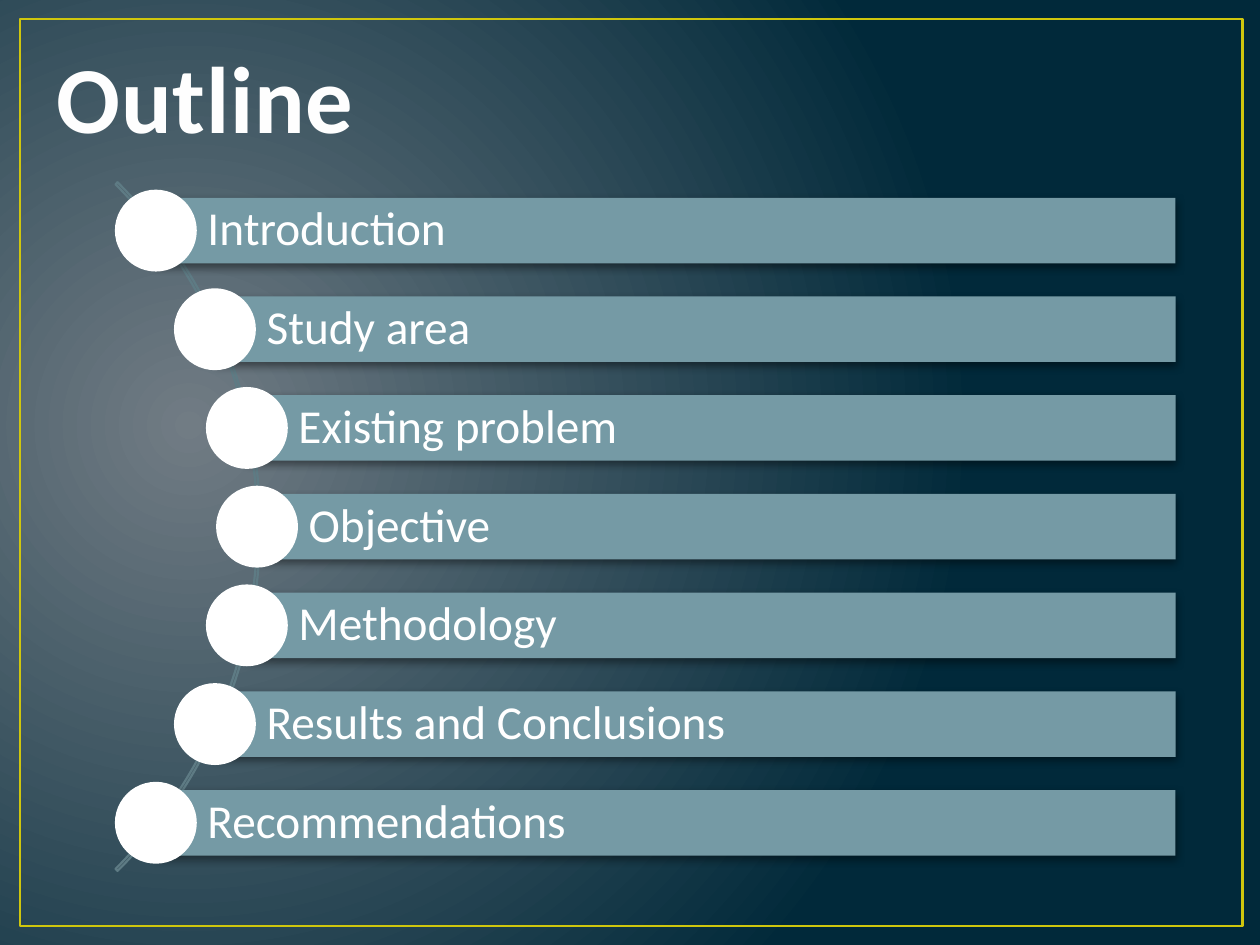
from math import sqrt

from pptx import Presentation
from pptx.dml.color import RGBColor
from pptx.enum.shapes import MSO_SHAPE
from pptx.enum.text import MSO_ANCHOR, PP_ALIGN
from pptx.oxml import parse_xml
from pptx.oxml.ns import nsdecls, qn
from pptx.util import Inches, Pt

WHITE = RGBColor(0xFF, 0xFF, 0xFF)
TITLE_WHITE = RGBColor(0xFE, 0xFE, 0xFE)
GLOW_GREY = RGBColor(0x71, 0x7C, 0x84)
NAVY = RGBColor(0x01, 0x29, 0x3A)
FRAME_YELLOW = RGBColor(0xCF, 0xC6, 0x0D)
ARC_TEAL = RGBColor(0x5E, 0x7B, 0x84)
BAR_TEAL = RGBColor(0x75, 0x9A, 0xA5)

TOPICS = [
    "Introduction",
    "Study area",
    "Existing problem",
    "Objective",
    "Methodology",
    "Results and Conclusions",
    "Recommendations",
]
FIRST_Y, LAST_Y = 1.83, 6.53
ARC_X, ARC_Y = -1.8, (FIRST_Y + LAST_Y) / 2
ARC_SIZE = 7.73
DOT_ORBIT = 3.84
BAR_RIGHT, BAR_HEIGHT = 9.33, 0.52
DOT_SIZE = 0.65


def paint_background(slide):
    fill = slide.background.fill
    fill.gradient()
    for stop, color in zip(fill.gradient_stops, (GLOW_GREY, NAVY)):
        stop.color.rgb = color
    gradient = slide.element.find(".//" + qn("a:gradFill"))
    gradient.replace(gradient.find(qn("a:lin")), parse_xml(
        f'<a:path {nsdecls("a")} path="circle">'
        '<a:fillToRect l="15000" t="50000" r="85000" b="60000"/></a:path>'))


def add_figure(slide, preset, left, top, width, height,
               fill=None, line=None, weight=1):
    figure = slide.shapes.add_shape(
        preset, Inches(left), Inches(top), Inches(width), Inches(height))
    figure.shadow.inherit = False
    if fill is None:
        figure.fill.background()
    else:
        figure.fill.solid()
        figure.fill.fore_color.rgb = fill
    if line is None:
        figure.line.fill.background()
    else:
        figure.line.color.rgb = line
        figure.line.width = Pt(weight)
    return figure


def drop_shadow(figure):
    figure.element.spPr.find(qn("a:effectLst")).append(parse_xml(
        f'<a:outerShdw {nsdecls("a")} blurRad="{Pt(5)}" dist="{Pt(2)}" '
        'dir="5400000" rotWithShape="0"><a:srgbClr val="000000">'
        '<a:alpha val="43000"/></a:srgbClr></a:outerShdw>'))


def write_text(holder, text, size, color, bold=False, anchor=MSO_ANCHOR.MIDDLE,
               insets=(0.1, 0.05, 0.1, 0.05), line_spacing=1.0, tracking=None):
    frame = holder.text_frame
    frame.word_wrap = True
    frame.vertical_anchor = anchor
    (frame.margin_left, frame.margin_top,
     frame.margin_right, frame.margin_bottom) = map(Inches, insets)
    paragraph = frame.paragraphs[0]
    paragraph.alignment = PP_ALIGN.LEFT
    paragraph.line_spacing = line_spacing
    run = paragraph.add_run()
    run.text = text
    run.font.name = "Calibri"
    run.font.size = Pt(size)
    run.font.bold = bold
    run.font.color.rgb = color
    if tracking:
        run.font._element.set("spc", str(int(tracking * 100)))


def add_title(slide, text):
    title = slide.shapes.add_textbox(
        Inches(0.35), Inches(0.25), Inches(8.33), Inches(1.01))
    write_text(title, text, size=54, color=TITLE_WHITE, bold=True,
               anchor=MSO_ANCHOR.BOTTOM, tracking=0.5)


def add_arc(slide):
    arc = add_figure(slide, MSO_SHAPE.BLOCK_ARC, ARC_X - ARC_SIZE / 2,
                     ARC_Y - ARC_SIZE / 2, ARC_SIZE, ARC_SIZE,
                     line=ARC_TEAL, weight=1.25)
    for index, value in enumerate((189, 27, 0.003)):
        arc.adjustments[index] = value


def add_topic(slide, topic, y):
    x = ARC_X + sqrt(DOT_ORBIT ** 2 - (y - ARC_Y) ** 2)
    bar = add_figure(slide, MSO_SHAPE.RECTANGLE, x, y - BAR_HEIGHT / 2,
                     BAR_RIGHT - x, BAR_HEIGHT, fill=BAR_TEAL)
    drop_shadow(bar)
    write_text(bar, topic, size=27, color=WHITE,
               insets=(0.41, 0.07, 0.07, 0.07), line_spacing=0.9)
    add_figure(slide, MSO_SHAPE.OVAL, x - DOT_SIZE / 2, y - DOT_SIZE / 2,
               DOT_SIZE, DOT_SIZE, fill=WHITE)


def main():
    deck = Presentation()
    deck.slide_width, deck.slide_height = Inches(10), Inches(7.5)
    slide = deck.slides.add_slide(deck.slide_layouts[6])
    paint_background(slide)
    add_figure(slide, MSO_SHAPE.RECTANGLE, 0.16, 0.15, 9.7, 7.2,
               line=FRAME_YELLOW, weight=1.5)
    add_title(slide, "Outline")
    add_arc(slide)
    pitch = (LAST_Y - FIRST_Y) / (len(TOPICS) - 1)
    for index, topic in enumerate(TOPICS):
        add_topic(slide, topic, FIRST_Y + index * pitch)
    deck.save("out.pptx")


if __name__ == "__main__":
    main()
